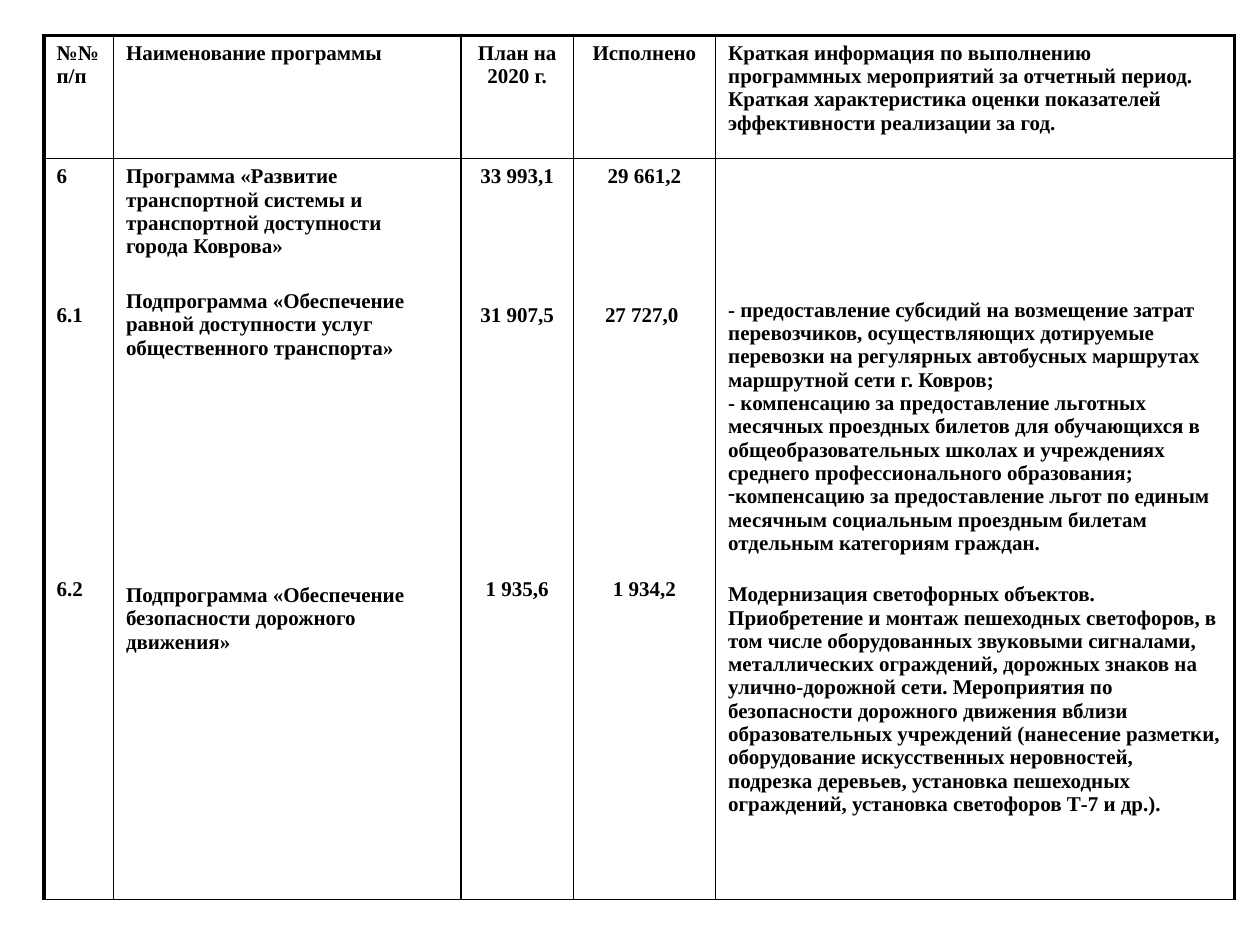
from lxml import etree
from pptx import Presentation
from pptx import util as u
from pptx.dml import color
from pptx.enum import text
from pptx.oxml import ns

COLORS = {"ink": "000000", "paper": "FFFFFF"}
FONT = {"name": "Times New Roman", "size": u.Pt(12), "bold": True}
THIN, THICK = 1, 2.25
COL_WIDTHS = [0.55, 2.76, 0.89, 1.13, 4.12]
ROW_HEIGHTS = [0.98, 5.88]
CENTERED_COLS = (2, 3)
GAP_SUB1, GAP_SUB2 = 66, 143
DETAILS_TOP = 1.11

HEADER = [
    "№№ п/п",
    "Наименование программы",
    "План на 2020 г.",
    "Исполнено",
    "Краткая информация по выполнению программных мероприятий за отчетный период. "
    "Краткая характеристика оценки показателей эффективности реализации за год.",
]
NUMBERS = ["6", "6.1", "6.2"]
PROGRAMS = [
    "Программа «Развитие транспортной системы и транспортной доступности города Коврова»",
    "Подпрограмма «Обеспечение равной доступности услуг общественного транспорта»",
    "Подпрограмма «Обеспечение безопасности дорожного движения»",
]
PLAN = ["33 993,1", "31 907,5", "1 935,6"]
DONE = ["29 661,2", "27 727,0 ", "1 934,2"]
DETAILS = [
    "- предоставление субсидий на возмещение затрат перевозчиков, осуществляющих "
    "дотируемые перевозки на регулярных автобусных маршрутах маршрутной сети г. Ковров;",
    "- компенсацию за предоставление льготных месячных проездных билетов для обучающихся "
    "в общеобразовательных школах и учреждениях среднего профессионального образования;",
    "компенсацию за предоставление льгот по единым месячным социальным проездным билетам "
    "отдельным категориям граждан.",
    "Модернизация светофорных объектов. Приобретение и монтаж пешеходных светофоров, "
    "в том числе оборудованных звуковыми сигналами, металлических ограждений, дорожных "
    "знаков на улично-дорожной сети. Мероприятия по безопасности дорожного движения вблизи "
    "образовательных учреждений (нанесение разметки, оборудование искусственных неровностей, "
    "подрезка деревьев, установка пешеходных ограждений, установка светофоров Т-7 и др.).",
]
DETAILS_BULLET = 2


def set_borders(cell, widths):
    tc_pr = cell._tc.get_or_add_tcPr()
    for side, width in widths.items():
        ln = etree.SubElement(tc_pr, ns.qn(f"a:ln{side}"), w=str(u.Pt(width)))
        fill = etree.SubElement(ln, ns.qn("a:solidFill"))
        etree.SubElement(fill, ns.qn("a:srgbClr"), val=COLORS["ink"])


def add_bullet(p, char):
    p_pr = p._p.get_or_add_pPr()
    p_pr.set("marL", "0")
    p_pr.set("indent", "0")
    etree.SubElement(p_pr, ns.qn("a:buChar"), char=char)


def fill_cell(cell, lines, gaps=(), align=text.PP_ALIGN.LEFT):
    tf = cell.text_frame
    for i, line in enumerate(lines):
        p = tf.add_paragraph() if i else tf.paragraphs[0]
        p.alignment = align
        if i and gaps[i - 1]:
            p.space_before = u.Pt(gaps[i - 1])
        r = p.add_run()
        r.text = line
        for key, value in FONT.items():
            setattr(r.font, key, value)
        r.font.color.rgb = color.RGBColor.from_string(COLORS["ink"])


def add_grid(s):
    frame = s.shapes.add_table(
        len(ROW_HEIGHTS), len(COL_WIDTHS), u.Inches(0.35), u.Inches(0.28),
        u.Inches(sum(COL_WIDTHS)), u.Inches(sum(ROW_HEIGHTS)))
    table = frame.table
    table.first_row = table.horz_banding = False
    for col, width in zip(table.columns, COL_WIDTHS):
        col.width = u.Inches(width)
    for row, height in zip(table.rows, ROW_HEIGHTS):
        row.height = u.Inches(height)
    last = len(COL_WIDTHS) - 1
    for r in range(len(ROW_HEIGHTS)):
        for c in range(len(COL_WIDTHS)):
            cell = table.cell(r, c)
            set_borders(cell, {
                "L": THICK if c == 0 else THIN,
                "R": THICK if c == last else THIN,
                "T": THICK if r == 0 else THIN,
                "B": THIN,
            })
            cell.fill.background()
    return table


def main():
    prs = Presentation()
    prs.slide_width, prs.slide_height = u.Inches(10), u.Inches(7.5)
    s = prs.slides.add_slide(prs.slide_layouts[6])
    s.background.fill.solid()
    s.background.fill.fore_color.rgb = color.RGBColor.from_string(COLORS["paper"])

    table = add_grid(s)
    number_gaps = (GAP_SUB1, GAP_SUB2)
    body = [
        (NUMBERS, number_gaps),
        (PROGRAMS, (18, 128)),
        (PLAN, number_gaps),
        (DONE, number_gaps),
        (DETAILS, (0, 0, 16)),
    ]
    for c, (title, (lines, gaps)) in enumerate(zip(HEADER, body)):
        align = text.PP_ALIGN.CENTER if c in CENTERED_COLS else text.PP_ALIGN.LEFT
        fill_cell(table.cell(0, c), [title], align=align)
        fill_cell(table.cell(1, c), lines, gaps, align)

    details = table.cell(1, len(HEADER) - 1)
    details.margin_top = u.Inches(DETAILS_TOP)
    add_bullet(details.text_frame.paragraphs[DETAILS_BULLET], "-")
    prs.save("out.pptx")


if __name__ == "__main__":
    main()
